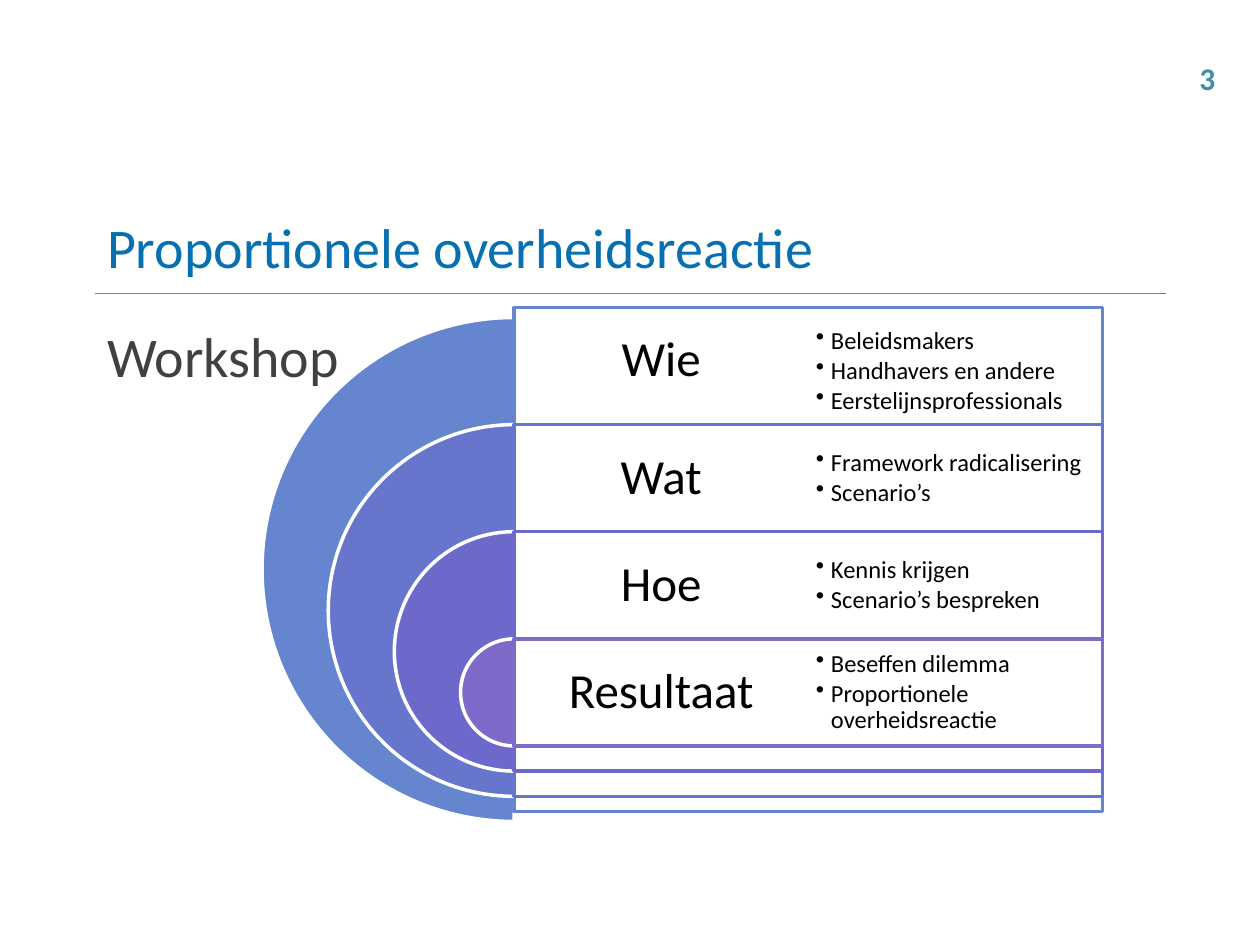
from lxml.etree import SubElement
from pptx import Presentation
from pptx.dml.color import RGBColor
from pptx.enum.shapes import MSO_CONNECTOR, MSO_SHAPE
from pptx.enum.text import MSO_ANCHOR, MSO_AUTO_SIZE, PP_ALIGN
from pptx.oxml.ns import qn
from pptx.util import Inches, Pt

COLORS = {
    "white": "FFFFFF",
    "black": "000000",
    "title": "0770B1",
    "rule": "0BA7DF",
    "body": "404040",
    "number": "3E8EA9",
}
LAYERS = [
    ("Wie", "6585CF", ["Beleidsmakers", "Handhavers en andere", "Eerstelijnsprofessionals"]),
    ("Wat", "6775CD", ["Framework radicalisering", "Scenario’s"]),
    ("Hoe", "6C69CB", ["Kennis krijgen", "Scenario’s bespreken"]),
    ("Resultaat", "7E6BC9", ["Beseffen dilemma", "Proportionele overheidsreactie"]),
]
ROW_HEIGHT = 0.85
SIZE_STEP = 1.05


def rgb(value):
    """Turn a hex string into a colour."""
    return RGBColor.from_string(value)


def place(shape, left, top, width, height):
    """Move and size a shape, in inches."""
    shape.left, shape.top = Inches(left), Inches(top)
    shape.width, shape.height = Inches(width), Inches(height)


def format_font(paragraph, size, color, bold=False):
    """Format every run of a paragraph."""
    for run in paragraph.runs:
        run.font.name = "Calibri"
        run.font.size = Pt(size)
        run.font.bold = bold
        run.font.color.rgb = rgb(color)


def add_text(slide, left, top, width, height, inset, lines):
    """Add a wrapping, vertically centred text box and return its paragraphs."""
    text_frame = slide.shapes.add_textbox(
        Inches(left), Inches(top), Inches(width), Inches(height)).text_frame
    text_frame.word_wrap = True
    text_frame.vertical_anchor = MSO_ANCHOR.MIDDLE
    text_frame.margin_left = text_frame.margin_right = Inches(inset)
    text_frame.margin_top = text_frame.margin_bottom = Inches(inset)
    text_frame.text = "\n".join(lines)
    return text_frame.paragraphs


def add_outlined(slide, kind, box, fill, line):
    """Add a filled preset shape with a two-point outline."""
    shape = slide.shapes.add_shape(kind, *(Inches(length) for length in box))
    shape.shadow.inherit = False
    shape.fill.solid()
    shape.fill.fore_color.rgb = rgb(fill)
    shape.line.color.rgb = rgb(line)
    shape.line.width = Pt(2)
    return shape


def add_header(slide, left, top, width, height):
    """Place the title and the rule below it."""
    title = slide.shapes.title
    place(title, left, top, width, height)
    title.text_frame.text = "Proportionele overheidsreactie"
    title.text_frame.vertical_anchor = MSO_ANCHOR.MIDDLE
    paragraph = title.text_frame.paragraphs[0]
    paragraph.alignment = PP_ALIGN.LEFT
    format_font(paragraph, 32, COLORS["title"])
    bottom = Inches(top + height)
    rule = slide.shapes.add_connector(
        MSO_CONNECTOR.STRAIGHT, Inches(left), bottom, Inches(left + width), bottom)
    rule.line.color.rgb = rgb(COLORS["rule"])
    rule.line.width = Pt(0.75)
    SubElement(rule._element.spPr, qn("a:effectLst"))


def add_body(slide, left, top, width, height):
    """Place the unbulleted body text."""
    body = slide.placeholders[1]
    place(body, left, top, width, height)
    body.fill.solid()
    body.fill.fore_color.rgb = rgb(COLORS["white"])
    body.text_frame.text = "Workshop"
    body.text_frame.auto_size = MSO_AUTO_SIZE.NONE
    paragraph = body.text_frame.paragraphs[0]
    properties = paragraph._p.get_or_add_pPr()
    properties.set("marL", "0")
    properties.set("indent", "0")
    SubElement(properties, qn("a:buNone"))
    format_font(paragraph, 32, COLORS["body"])


def add_layer_shapes(slide, center, right, top, panel_top, size, color):
    """Draw one half disc and the panel to its right."""
    half_disc = add_outlined(
        slide, MSO_SHAPE.PIE, (center - size / 2, top, size, size), color, COLORS["white"])
    half_disc.adjustments[0], half_disc.adjustments[1] = 54, 162
    panel = add_outlined(
        slide, MSO_SHAPE.RECTANGLE, (center, panel_top, right - center, size),
        COLORS["white"], color)
    fill_color = panel._element.spPr.find(".//" + qn("a:srgbClr"))
    SubElement(fill_color, qn("a:alpha"), val="90000")


def add_label(slide, left, top, width, label):
    """Write the large centred label of a layer."""
    paragraph = add_text(slide, left, top, width, ROW_HEIGHT, 0.12, [label])[0]
    paragraph.alignment = PP_ALIGN.CENTER
    paragraph.line_spacing = 0.9
    paragraph.space_after = Pt(10)
    format_font(paragraph, 28, COLORS["black"])


def add_items(slide, left, top, width, items):
    """Write the bulleted items of a layer."""
    for paragraph in add_text(slide, left, top, width, ROW_HEIGHT, 0.06, items):
        properties = paragraph._p.get_or_add_pPr()
        properties.set("marL", str(Inches(0.12)))
        properties.set("indent", str(Inches(-0.12)))
        SubElement(properties, qn("a:buChar"), char="•")
        paragraph.level = 1
        paragraph.line_spacing = 0.9
        paragraph.space_after = Pt(2)
        format_font(paragraph, 14, COLORS["black"])


def add_nested_diagram(slide, left, top, width, height):
    """Draw the nested half discs with their labels and items."""
    center = left + height / 2
    right = left + width
    column = (right - center) / 2
    for index, (label, color, items) in enumerate(LAYERS):
        row_top = top + index * ROW_HEIGHT
        panel_top = row_top if index else row_top - 0.08
        size = height - index * SIZE_STEP
        add_layer_shapes(slide, center, right, row_top, panel_top, size, color)
        add_label(slide, center, panel_top, column, label)
    for index, (label, color, items) in enumerate(LAYERS):
        add_items(slide, center + column, top + index * ROW_HEIGHT, column, items)


def add_page_number(slide, left, top, width, height):
    """Write the page number."""
    text_box = slide.shapes.add_textbox(
        Inches(left), Inches(top), Inches(width), Inches(height))
    text_box.text_frame.word_wrap = False
    text_box.text_frame.text = "3"
    format_font(text_box.text_frame.paragraphs[0], 18, COLORS["number"], bold=True)


def main():
    """Build and save the slide."""
    presentation = Presentation()
    presentation.slide_width = Inches(10)
    presentation.slide_height = Inches(7.5)
    slide = presentation.slides.add_slide(presentation.slide_layouts[1])
    add_header(slide, 0.75, 1.58, 8.5, 0.75)
    add_body(slide, 0.75, 2.5, 5.5, 4.08)
    add_nested_diagram(slide, 2.08, 2.52, 6.67, 4)
    add_page_number(slide, 9.42, 0.42, 0.33, 0.4)
    presentation.save("out.pptx")


if __name__ == "__main__":
    main()
